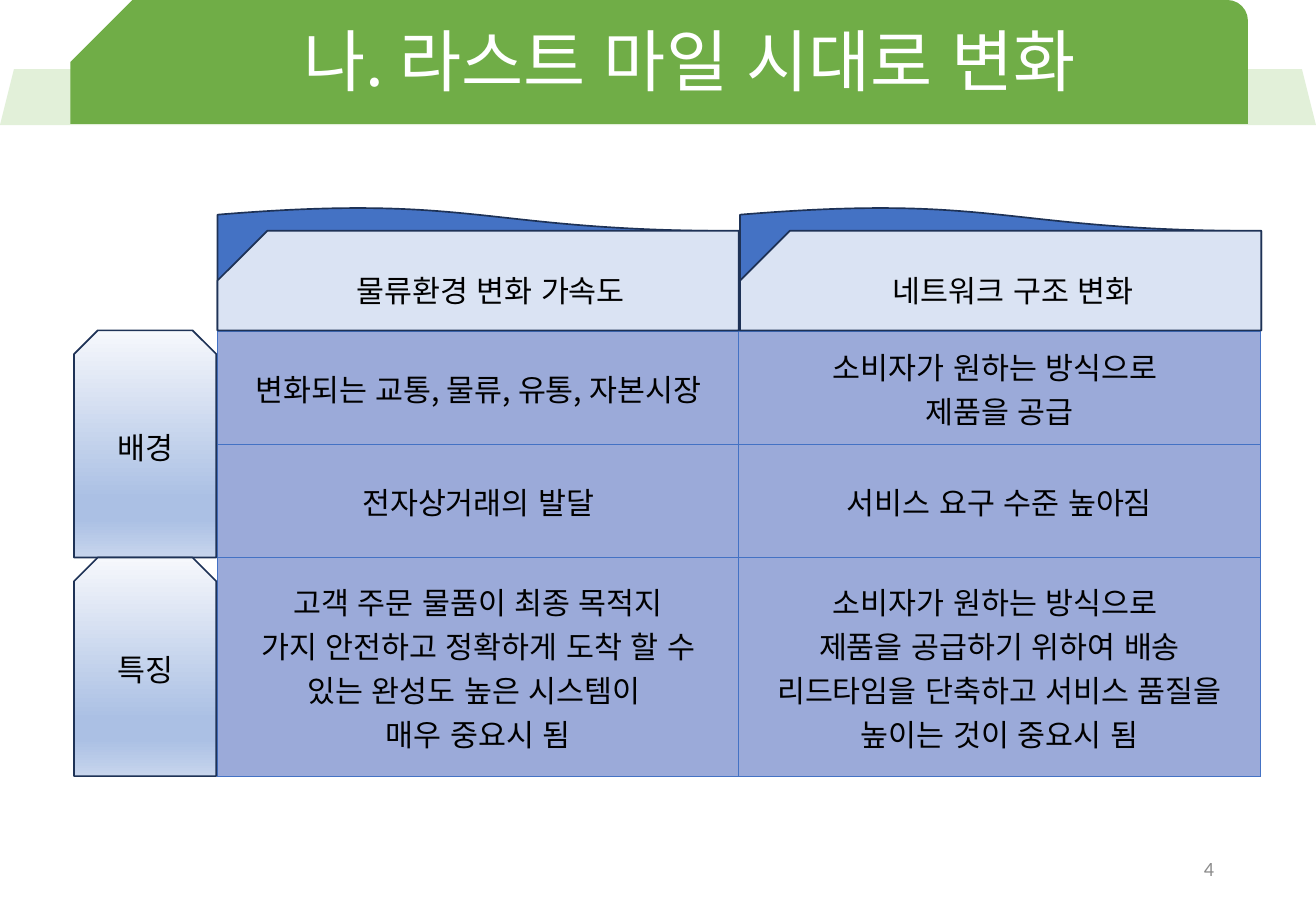
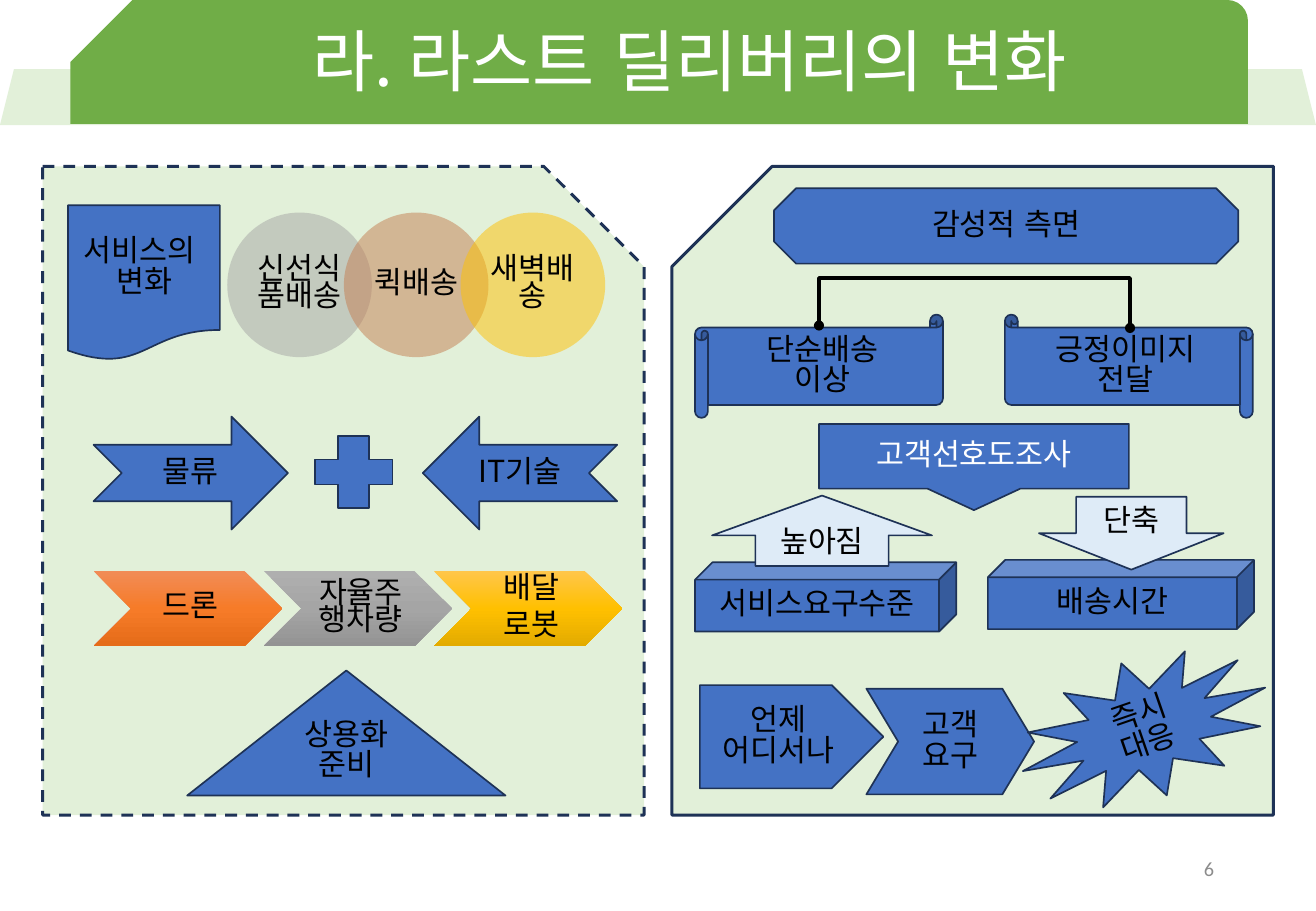
from lxml.etree import SubElement
from pptx import Presentation
from pptx.dml.color import RGBColor
from pptx.enum.dml import MSO_LINE
from pptx.enum.lang import MSO_LANGUAGE_ID
from pptx.enum.shapes import MSO_CONNECTOR, MSO_SHAPE
from pptx.enum.text import MSO_ANCHOR, PP_ALIGN
from pptx.oxml.ns import qn
from pptx.util import Inches, Pt

KOREAN_FONT, NUMBER_FONT = "Noto Sans CJK KR", "Calibri"
WHITE = RGBColor(0xFF, 0xFF, 0xFF)
BLACK = RGBColor(0x00, 0x00, 0x00)
GREY = RGBColor(0x8C, 0x8C, 0x8C)
GREEN = RGBColor(0x70, 0xAD, 0x47)
PALE_GREEN = RGBColor(0xE2, 0xF0, 0xD9)
BLUE = RGBColor(0x44, 0x72, 0xC4)
NAVY = RGBColor(0x1E, 0x32, 0x56)
CELL_BLUE = RGBColor(0x9B, 0xAA, 0xD9)
HEADER_BLUE = RGBColor(0xDA, 0xE3, 0xF3)
ARROW_BLUE = RGBColor(0xDE, 0xEB, 0xF7)
SILVER = RGBColor(0xA5, 0xA5, 0xA5)
BROWN = RGBColor(0xC4, 0x7E, 0x51)
GOLD = RGBColor(0xFF, 0xC0, 0x00)

# Gradient stops as (percent, colour), from top to bottom
TAB_GRADIENT = [(0, "F6F8FC"), (74, "ABC0E4"), (83, "ABC0E4"), (100, "C7D5ED")]
ORANGE_GRADIENT = [(0, "F18C57"), (50, "F67B28"), (100, "E56C19")]
SILVER_GRADIENT = [(0, "AFAFAF"), (50, "A5A5A5"), (100, "939393")]
GOLD_GRADIENT = [(0, "FFC64B"), (50, "FFC000"), (100, "E3AB00")]

TIGHT = 0.84
TIGHTER = 0.76


class Deck:
    """Holds the presentation, its style and the current slide."""

    def __init__(self):
        self.presentation = Presentation()
        self.presentation.slide_width = Inches(10.83)
        self.presentation.slide_height = Inches(7.5)
        self.slide = None

    def new_slide(self, title, number):
        layout = self.presentation.slide_layouts[6]
        self.slide = self.presentation.slides.add_slide(layout)
        # Title band
        self.shape(MSO_SHAPE.TRAPEZOID, (0, 0.57, 10.83, 0.46),
                   fill=PALE_GREEN, line=None)
        self.shape(MSO_SHAPE.SNIP_ROUND_RECTANGLE, (0.58, 0, 9.69, 1.02),
                   fill=GREEN, line=None, flip="flipH", adjust=(0.167, 0.5))
        self.text_box((1.08, 0.02, 9.19, 1.02), [title],
                      size=40, color=WHITE, spacing=0.9)
        # Page number
        self.text_box((7.65, 6.95, 2.44, 0.4), [number], size=12, color=GREY,
                      name=NUMBER_FONT, align=PP_ALIGN.RIGHT)

    def add_lines(self, frame, lines, size=18, color=BLACK, name=KOREAN_FONT,
                  align=PP_ALIGN.CENTER, spacing=1.0, gap=0):
        values = {"size": Pt(size), "name": name,
                  "language_id": MSO_LANGUAGE_ID.KOREAN}
        for index, line in enumerate(lines):
            paragraph = frame.paragraphs[0] if index == 0 else frame.add_paragraph()
            paragraph.alignment = align
            paragraph.line_spacing = spacing
            if gap and index < len(lines) - 1:
                paragraph.space_after = Pt(gap)
            run = paragraph.add_run()
            run.text = line
            for attribute, value in values.items():
                setattr(run.font, attribute, value)
            run.font.color.rgb = color
            properties = run._r.get_or_add_rPr()
            east_asian = SubElement(properties, qn("a:ea"), typeface=name)
            properties.find(qn("a:latin")).addnext(east_asian)

    def frame(self, shape, lines, margins=(0.1, 0.05, 0.1, 0.05), **style):
        text_frame = shape.text_frame
        sides = ("margin_left", "margin_top", "margin_right", "margin_bottom")
        values = {"word_wrap": True, "vertical_anchor": MSO_ANCHOR.MIDDLE,
                  **dict(zip(sides, map(Inches, margins)))}
        for attribute, value in values.items():
            setattr(text_frame, attribute, value)
        self.add_lines(text_frame, lines, **style)

    def text_box(self, box, lines, **style):
        shape = self.slide.shapes.add_textbox(*map(Inches, box))
        self.frame(shape, lines, **style)

    def shape(self, kind, box, lines=(), fill=BLUE, line=NAVY, width=1,
              dash=None, flip=None, adjust=(), rotation=0, alpha=None,
              spacing=TIGHT, **style):
        shape = self.slide.shapes.add_shape(kind, *map(Inches, box))
        shape.shadow.inherit = False
        shape.rotation = rotation
        for index, value in enumerate(adjust):
            shape.adjustments[index] = value
        properties = shape.element.spPr
        if flip:
            properties.find(qn("a:xfrm")).set(flip, "1")
        if isinstance(fill, list):
            self.gradient(shape, fill)
        else:
            shape.fill.solid()
            shape.fill.fore_color.rgb = fill
        if alpha:
            color = properties.find(qn("a:solidFill")).find(qn("a:srgbClr"))
            SubElement(color, qn("a:alpha"), val=str(alpha * 1000))
        if line is None:
            shape.line.fill.background()
        else:
            shape.line.color.rgb = line
            shape.line.width = Pt(width)
            if dash:
                shape.line.dash_style = dash
        if lines:
            self.frame(shape, lines, spacing=spacing, **style)

    def gradient(self, shape, stops):
        shape.fill.gradient()
        shape.fill.gradient_angle = 270
        stop_list = next(shape.element.spPr.iter(qn("a:gsLst")))
        for stop in list(stop_list):
            stop_list.remove(stop)
        for percent, color in stops:
            stop = SubElement(stop_list, qn("a:gs"), pos=str(percent * 1000))
            SubElement(stop, qn("a:srgbClr"), val=color)

    def bracket(self, box, adjust):
        """Elbow connector turned to open downwards, with round ends."""
        left, top, width, height = box
        connector = self.slide.shapes.add_connector(
            MSO_CONNECTOR.ELBOW, Inches(left), Inches(top),
            Inches(left + width), Inches(top + height))
        connector.line.color.rgb = BLACK
        connector.line.width = Pt(2)
        properties = connector.element.spPr
        transform = properties.find(qn("a:xfrm"))
        transform.set("rot", str(270 * 60000))
        transform.set("flipH", "1")
        geometry = properties.find(qn("a:prstGeom"))
        guides = geometry.find(qn("a:avLst"))
        if guides is None:
            guides = SubElement(geometry, qn("a:avLst"))
        SubElement(guides, qn("a:gd"), name="adj1",
                   fmla=f"val {round(adjust * 100000)}")
        outline = properties.find(qn("a:ln"))
        for end in ("a:headEnd", "a:tailEnd"):
            SubElement(outline, qn(end), type="oval")
        SubElement(properties, qn("a:effectLst"))

    def table(self, box, heights, rows):
        table = self.slide.shapes.add_table(
            len(rows), len(rows[0]), *map(Inches, box)).table
        table.first_row = table.horz_banding = False
        for column in table.columns:
            column.width = Inches(box[2] / len(rows[0]))
        for row, height, texts in zip(table.rows, heights, rows):
            row.height = Inches(height)
            for cell, lines in zip(row.cells, texts):
                cell.vertical_anchor = MSO_ANCHOR.MIDDLE
                cell.margin_left = cell.margin_right = Inches(0.15)
                self.add_lines(cell.text_frame, lines)
                self.borders(cell)
                cell.fill.solid()
                cell.fill.fore_color.rgb = CELL_BLUE

    def borders(self, cell):
        properties = cell._tc.get_or_add_tcPr()
        for side in ("a:lnL", "a:lnR", "a:lnT", "a:lnB"):
            border = SubElement(properties, qn(side), w=str(Pt(0.5)))
            fill = SubElement(border, qn("a:solidFill"))
            SubElement(fill, qn("a:srgbClr"), val=str(BLUE))


def build_change_table(deck):
    deck.new_slide("나. 라스트 마일 시대로 변화", "4")
    deck.table((1.79, 2.73, 8.58, 3.66), (0.93, 0.93, 1.8), [
        [["변화되는 교통, 물류, 유통, 자본시장"],
         ["소비자가 원하는 방식으로 ", "제품을 공급"]],
        [["전자상거래의 발달"], ["서비스 요구 수준 높아짐"]],
        [["고객 주문 물품이 최종 목적지",
          "가지 안전하고 정확하게 도착 할 수 있는 완성도 높은 시스템이 ",
          "매우 중요시 됨"],
         ["소비자가 원하는 방식으로 ",
          "제품을 공급하기 위하여 배송 리드타임을 단축하고 서비스 품질을 높이는 것이 중요시 됨"]],
    ])
    # Row tabs
    for label, top, height in (("배경", 2.72, 1.87), ("특징", 4.59, 1.8)):
        deck.shape(MSO_SHAPE.SNIP_2_SAME_RECTANGLE, (0.61, top, 1.17, height),
                   [label], fill=TAB_GRADIENT)
    # Column headers
    for column, label in enumerate(("물류환경 변화 가속도", "네트워크 구조 변화")):
        left = 1.79 + 4.3 * column
        deck.shape(MSO_SHAPE.FLOWCHART_DOCUMENT, (left, 1.7, 4.29, 1.02),
                   flip="flipV")
        deck.shape(MSO_SHAPE.SNIP_1_RECTANGLE, (left, 1.9, 4.29, 0.82), [label],
                   fill=HEADER_BLUE, flip="flipH", adjust=[0.5])


def build_emotional_panel(deck):
    deck.shape(MSO_SHAPE.SNIP_1_RECTANGLE, (5.53, 1.37, 4.95, 5.34),
               fill=PALE_GREEN, width=1.75, flip="flipH")
    deck.shape(MSO_SHAPE.OCTAGON, (6.37, 1.55, 3.82, 0.62), ["감성적 측면"])
    # Scrolls joined by a bracket
    deck.shape(MSO_SHAPE.HORIZONTAL_SCROLL, (5.72, 2.59, 2.04, 0.85),
               ["단순배송", "이상"])
    deck.shape(MSO_SHAPE.HORIZONTAL_SCROLL, (8.27, 2.59, 2.04, 0.85),
               ["긍정이미지", "전달"], flip="flipH")
    deck.bracket((8.01, 1.41, 0.02, 2.56), -19.5)
    # Survey and its findings
    deck.shape(MSO_SHAPE.DOWN_ARROW_CALLOUT, (6.74, 3.49, 2.55, 0.71),
               ["고객선호도조사"], color=WHITE, adjust=(1.078, 0.539, 0.25, 0.75))
    deck.shape(MSO_SHAPE.CUBE, (5.72, 4.63, 2.15, 0.57), ["서비스요구수준"])
    deck.shape(MSO_SHAPE.UP_ARROW, (5.86, 4.08, 1.81, 0.58), ["높아짐"],
               fill=ARROW_BLUE, adjust=(0.606, 0.566))
    deck.shape(MSO_SHAPE.CUBE, (8.13, 4.61, 2.19, 0.57), ["배송시간"])
    deck.shape(MSO_SHAPE.DOWN_ARROW, (8.55, 4.09, 1.52, 0.6), ["단축"],
               fill=ARROW_BLUE, adjust=(0.597, 0.5))
    # Response flow
    deck.shape(MSO_SHAPE.PENTAGON, (5.76, 5.64, 1.51, 0.85), ["언제", "어디서나"])
    deck.shape(MSO_SHAPE.CHEVRON, (7.13, 5.67, 1.38, 0.87), ["고객요구"],
               adjust=[0.3])
    deck.shape(MSO_SHAPE.STAR_12_POINT, (8.36, 5.43, 2.11, 1.15),
               ["즉시", "대응"], rotation=341, adjust=[0.272])


def build_service_panel(deck):
    deck.shape(MSO_SHAPE.SNIP_1_RECTANGLE, (0.35, 1.37, 4.95, 5.34),
               fill=PALE_GREEN, width=1.75, dash=MSO_LINE.DASH)
    deck.shape(MSO_SHAPE.FLOWCHART_DOCUMENT, (0.56, 1.69, 1.25, 1.28),
               ["서비스의 ", "변화"])
    # Technology chevrons
    chevrons = ((["드론"], ORANGE_GRADIENT), (["자율주행차량"], SILVER_GRADIENT),
                (["배달", "로봇"], GOLD_GRADIENT))
    for index, (lines, fill) in enumerate(chevrons):
        deck.shape(MSO_SHAPE.CHEVRON, (0.77 + 1.4 * index, 4.7, 1.55, 0.62), lines,
                   fill=fill, line=None, margins=(0.08, 0.03, 0.03, 0.03),
                   spacing=TIGHTER, gap=5.3)
    # Overlapping delivery circles
    circles = (("신선식품배송", SILVER), ("퀵배송", BROWN), ("새벽배송", GOLD))
    for index, (label, fill) in enumerate(circles):
        deck.shape(MSO_SHAPE.OVAL, (1.87 + 0.96 * index, 1.75, 1.19, 1.19), [label],
                   fill=fill, line=None, alpha=50,
                   margins=(0.06, 0.03, 0.06, 0.03), spacing=TIGHTER)
    # Logistics plus IT
    deck.shape(MSO_SHAPE.NOTCHED_RIGHT_ARROW, (0.77, 3.43, 1.6, 0.93), ["물류"])
    deck.shape(MSO_SHAPE.NOTCHED_RIGHT_ARROW, (3.48, 3.43, 1.6, 0.93), ["IT기술"],
               flip="flipH")
    deck.shape(MSO_SHAPE.CROSS, (2.59, 3.59, 0.64, 0.59), adjust=[0.325])
    # Commercial readiness
    deck.shape(MSO_SHAPE.ISOSCELES_TRIANGLE, (1.54, 5.52, 2.62, 1.03))
    deck.text_box((2.32, 5.83, 1.06, 0.71), ["상용화", "준비"], spacing=TIGHT)


def main():
    deck = Deck()
    build_change_table(deck)
    deck.new_slide("라. 라스트 딜리버리의 변화", "6")
    build_emotional_panel(deck)
    build_service_panel(deck)
    deck.presentation.save("out.pptx")


if __name__ == "__main__":
    main()
